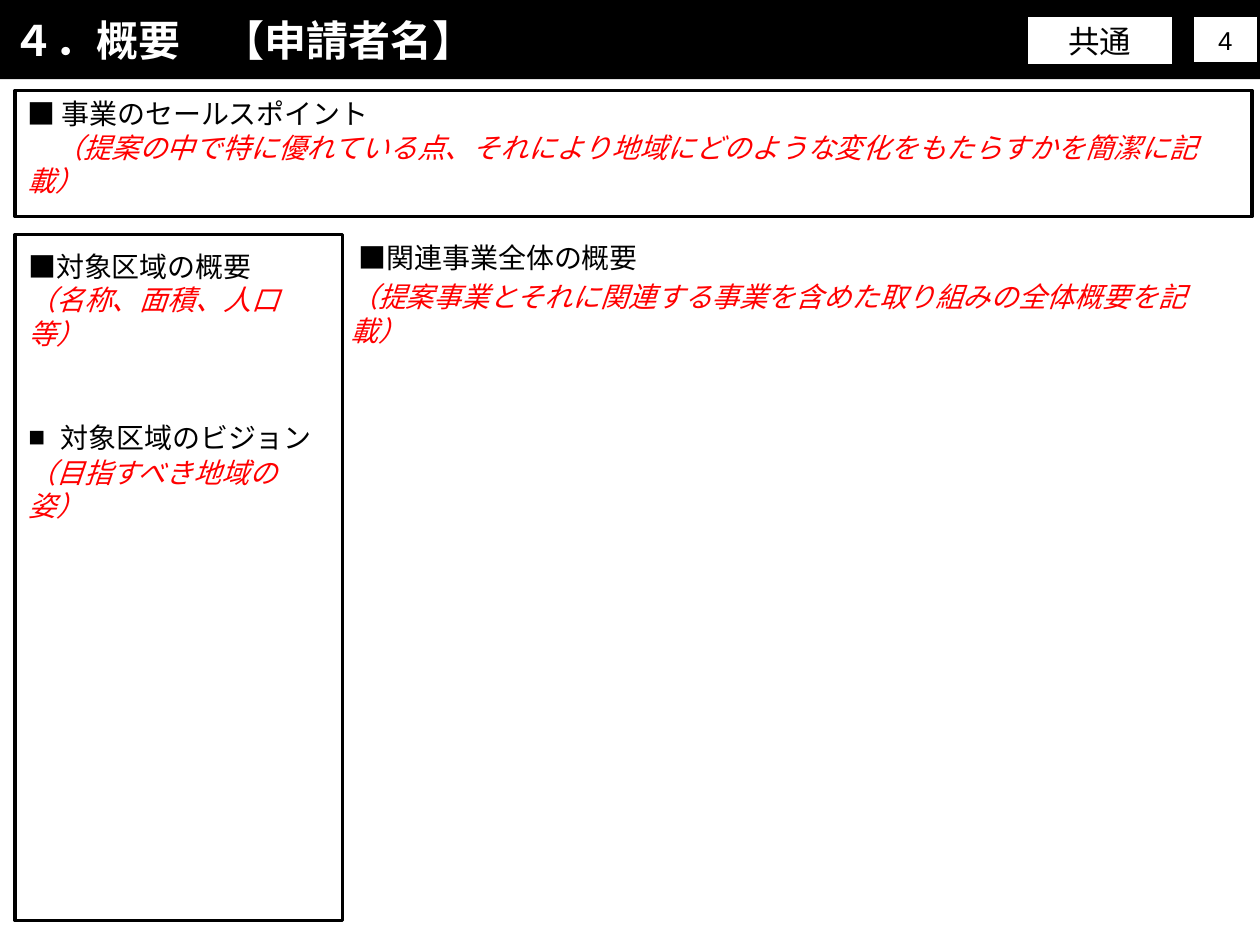
from lxml import etree
from pptx import Presentation
from pptx.dml.color import RGBColor
from pptx.enum import shapes, text
from pptx.oxml import ns
from pptx.util import Pt

COLORS = {"ink": "000000", "paper": "FFFFFF", "hint": "FF0000"}
JAPANESE = "Noto Sans CJK JP"


def rgb(name):
    return RGBColor.from_string(COLORS[name])


def add_box(slide, box, fill=None, line=None):
    panel = slide.shapes.add_shape(shapes.MSO_SHAPE.RECTANGLE, *map(Pt, box))
    panel.shadow.inherit = False
    if fill:
        panel.fill.solid()
        panel.fill.fore_color.rgb = rgb(fill)
    else:
        panel.fill.background()
    if line:
        panel.line.color.rgb = rgb("ink")
        panel.line.width = Pt(line)
    else:
        panel.line.fill.background()
    return panel.text_frame


def add_text_area(slide, box):
    frame = slide.shapes.add_textbox(*map(Pt, box)).text_frame
    frame.word_wrap = True
    return frame


def write(frame, words, size=16, font="Arial", color="ink", bold=False, italic=False,
          align=text.PP_ALIGN.LEFT, anchor=text.MSO_ANCHOR.TOP, before=0, bullet=None):
    frame.vertical_anchor = anchor
    paragraph = frame.paragraphs[0]
    if paragraph.runs:
        paragraph = frame.add_paragraph()
    paragraph.alignment = align
    paragraph.space_before = Pt(before)
    if bullet:
        properties = paragraph._p.get_or_add_pPr()
        properties.set("marL", str(Pt(18.5)))
        properties.set("indent", str(Pt(-18.5)))
        etree.SubElement(properties, ns.qn("a:buFont"), typeface="Arial")
        etree.SubElement(properties, ns.qn("a:buChar"), char=bullet)
    run = paragraph.add_run()
    run.text = words
    run.font.size = Pt(size)
    run.font.name = font
    run.font.color.rgb = rgb(color)
    run.font.bold = bold
    run.font.italic = italic
    etree.SubElement(run._r.get_or_add_rPr(), ns.qn("a:ea"), typeface=JAPANESE)


def add_header(slide, box):
    left, top, width, height = box
    middle = text.MSO_ANCHOR.MIDDLE
    write(add_box(slide, box, fill="ink"), "４．概要\u3000【申請者名】".replace("\u3000", "　"),
          size=24, font=JAPANESE, color="paper", bold=True, anchor=middle)
    right = left + width
    category = (right - 133.2, top + 9.4, 83.5, 27.4)
    page_number = (right - 38.2, top + 9.4, 36.7, 26.6)
    for label, area, size, line in (("共通", category, 18, 1), ("4", page_number, 14.8, 0.75)):
        write(add_box(slide, area, fill="paper", line=line), label, size=size,
              align=text.PP_ALIGN.CENTER, anchor=middle)


def add_sales_point(slide, box):
    frame = add_box(slide, box, line=2)
    write(frame, "■ 事業のセールスポイント", font=JAPANESE)
    write(frame, "　（提案の中で特に優れている点、それにより地域にどのような変化をもたらすかを簡潔に記載）",
          font=JAPANESE, color="hint", italic=True)


def add_target_area(slide, box):
    left, top, width, height = box
    add_box(slide, box, line=2)
    frame = add_text_area(slide, (left + 0.5, top + 5, width, 168.5))
    write(frame, "■対象区域の概要")
    write(frame, "（名称、面積、人口等）", color="hint", italic=True)
    write(frame, "対象区域のビジョン", font="Roboto", before=40, bullet="■")
    write(frame, "（目指すべき地域の姿）", font="Roboto", color="hint", italic=True, before=0.8)


def add_related_projects(slide, box):
    left, top, width, height = box
    write(add_text_area(slide, (left + 5, top, width - 5, 26.6)), "■関連事業全体の概要")
    write(add_text_area(slide, (left, top + 22.3, width - 18, 46)),
          "（提案事業とそれに関連する事業を含めた取り組みの全体概要を記載）",
          color="hint", italic=True)


def main():
    deck = Presentation()
    deck.slide_width, deck.slide_height = Pt(720), Pt(540)
    slide = deck.slides.add_slide(deck.slide_layouts[6])
    add_header(slide, (0, 0, 720, 45.2))
    add_sales_point(slide, (8.6, 51.8, 707, 72))
    add_target_area(slide, (8.6, 134, 187.2, 392))
    add_related_projects(slide, (193, 134, 525, 392))
    deck.save("out.pptx")


if __name__ == "__main__":
    main()
